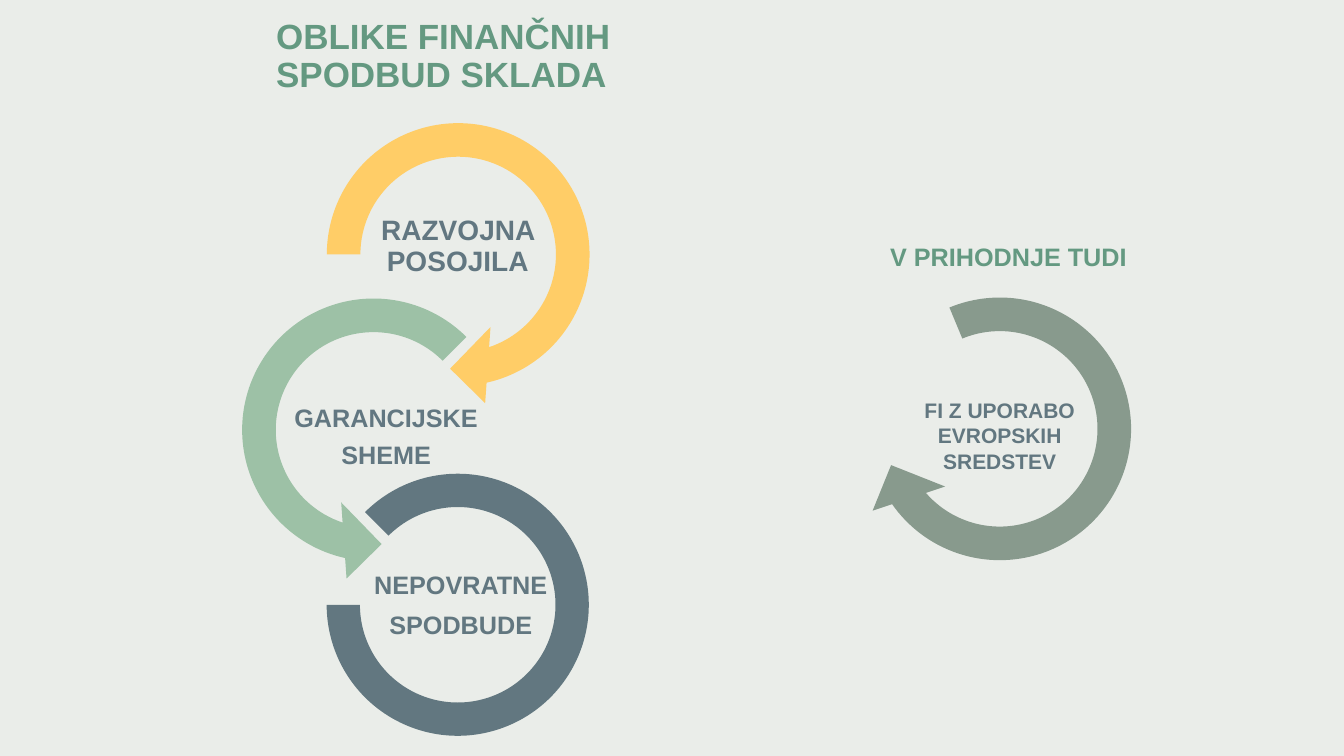
from pptx import Presentation
from pptx.dml.color import RGBColor
from pptx.enum import shapes, text
from pptx.util import Inches, Pt

GREEN, SLATE = "649981", "627781"
RING = shapes.MSO_SHAPE
ARROW = 3.03  # side of the box around a circular arrow


def color(value):
    return RGBColor.from_string(value)


def add_ring(slide, preset, left, top, side, fill, adjustments, rotation=0):
    ring = slide.shapes.add_shape(
        preset, Inches(left), Inches(top), Inches(side), Inches(side))
    for index, value in enumerate(adjustments):
        ring.adjustments[index] = value
    ring.rotation = rotation
    ring.shadow.inherit = False
    ring.fill.solid()
    ring.fill.fore_color.rgb = color(fill)
    ring.line.fill.background()


def add_arrow(slide, preset, left, top, fill, end, start, rotation=0):
    add_ring(slide, preset, left, top, ARROW, fill,
             (0.11, 11.423, end, start, 0.125), rotation)


def add_text(slide, box, lines, size, fill, spacing=1.0, after=0, label=True):
    frame = slide.shapes.add_textbox(*map(Inches, box)).text_frame
    frame.word_wrap = True
    if label:
        frame.vertical_anchor = text.MSO_ANCHOR.MIDDLE
        frame.margin_left = frame.margin_right = Inches(0.01)
        frame.margin_top = frame.margin_bottom = Inches(0.01)
    for index, line in enumerate(lines):
        paragraph = frame.add_paragraph() if index else frame.paragraphs[0]
        paragraph.text = line
        paragraph.alignment = text.PP_ALIGN.CENTER if label else text.PP_ALIGN.LEFT
        paragraph.line_spacing = spacing
        paragraph.space_after = Pt(after)
        font = paragraph.font
        font.name, font.size, font.bold = "Arial", Pt(size), True
        font.color.rgb = color(fill)


def add_heading(slide, box, line, size):
    add_text(slide, box, [line], size, GREEN, spacing=0.9, label=False)


def add_current_forms(slide, left, top):
    """Chain of three rings with their heading."""
    # Loans
    add_arrow(slide, RING.CIRCULAR_ARROW, left + 0.84, top + 0.87, "FFCD67", 45, 108)
    add_text(slide, (left + 1.51, top + 1.89, 1.68, 0.84),
             ["RAZVOJNA POSOJILA"], 20, SLATE, 0.9, 7)
    # Guarantees
    add_arrow(slide, RING.LEFT_CIRCULAR_ARROW, left, top + 2.61, "9DC1A6", 63, 189)
    add_text(slide, (left + 0.14, top + 3.78, 3, 0.84),
             ["GARANCIJSKE", "SHEME"], 18, SLATE, 0.9, 7)
    # Grants
    add_ring(slide, RING.BLOCK_ARC, left + 1.05, top + 4.56, 2.6, "627780",
             (135, 108, 0.127))
    add_text(slide, (left + 1.4, top + 5.44, 1.96, 0.84),
             ["NEPOVRATNE", "SPODBUDE"], 18, "627780", after=7)
    add_heading(slide, (left + 0.45, top, 3.65, 0.98),
                "OBLIKE FINANČNIH SPODBUD SKLADA", 25)


def add_future_form(slide, left, top):
    """Single ring with its heading."""
    add_arrow(slide, RING.CIRCULAR_ARROW, left, top + 0.36, "889A8D", 45, 108, 67.5)
    add_text(slide, (left + 0.37, top + 1.52, 2.29, 0.84),
             ["FI Z UPORABO EVROPSKIH SREDSTEV"], 15, "627780", after=5)
    add_heading(slide, (left + 0.33, top, 4.5, 0.98), "V PRIHODNJE TUDI", 18)


def main():
    deck = Presentation()
    deck.slide_width, deck.slide_height = Inches(13.33), Inches(7.5)
    slide = deck.slides.add_slide(deck.slide_layouts[6])
    slide.background.fill.solid()
    slide.background.fill.fore_color.rgb = color("EAEDE9")
    add_current_forms(slide, 2.19, 0.14)
    add_future_form(slide, 8.4, 2.38)
    deck.save("out.pptx")


if __name__ == "__main__":
    main()
